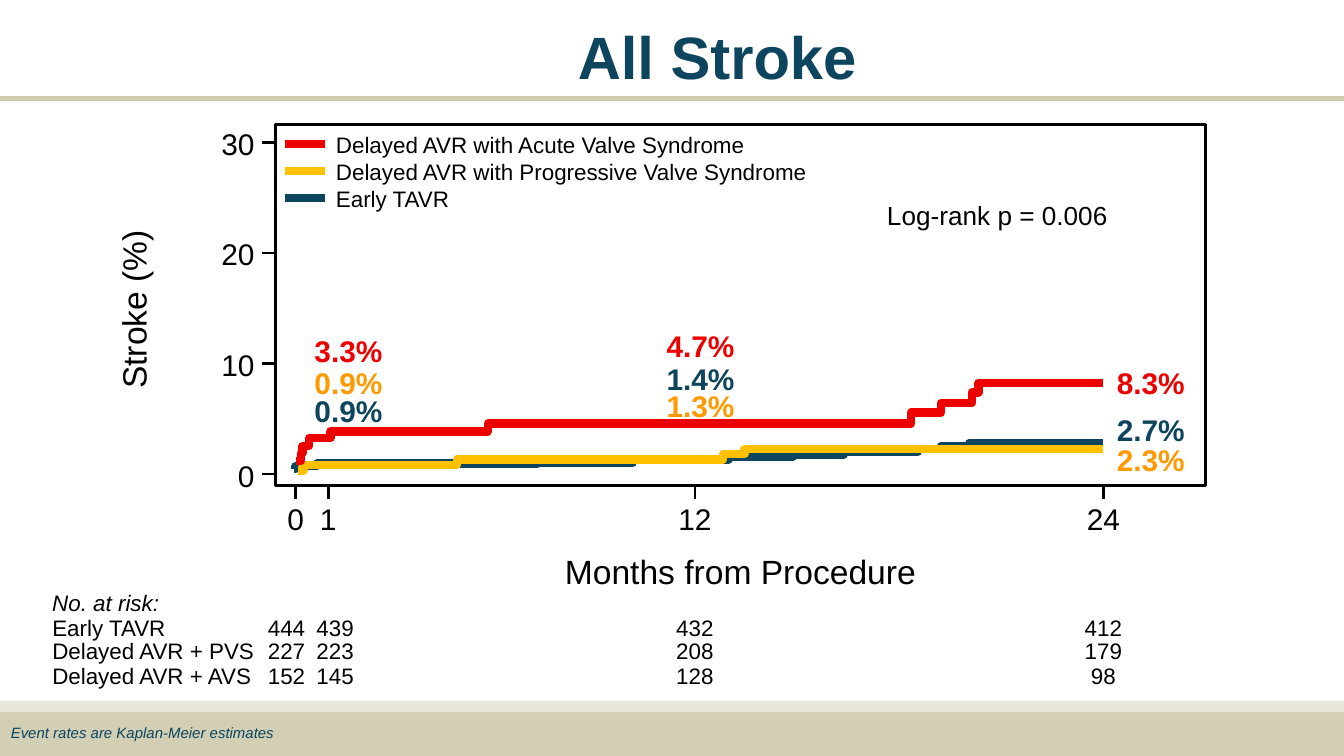
"""Build the All Stroke slide with its Kaplan-Meier curves."""
from dataclasses import dataclass
from typing import Optional

from lxml.etree import SubElement
from pptx import Presentation
from pptx.dml.color import RGBColor
from pptx.enum.shapes import MSO_CONNECTOR as Connector, MSO_SHAPE as Shape
from pptx.enum.text import MSO_ANCHOR as Anchor, MSO_AUTO_SIZE as AutoSize, PP_ALIGN as Align
from pptx.oxml.ns import qn
from pptx.util import Pt


@dataclass(frozen=True)
class Theme:
    font: str = "Arial"
    black: str = "000000"
    navy: str = "0D445E"
    red: str = "ED0000"
    gold: str = "FFC000"
    orange: str = "FF9900"
    band: str = "D2CFB5"
    band_light: str = "E9E7DA"
    rule: str = "D0CDAE"
    title: float = 32
    axis_title: float = 18
    value: float = 16
    note: float = 14
    label: float = 12
    footer: float = 8
    axis_line: float = 1.5
    curve_line: float = 4.5


@dataclass(frozen=True)
class Line:
    text: str
    color: str = Theme.black
    spacing: Optional[float] = None
    before: float = 0


@dataclass(frozen=True)
class TextBox:
    left: float
    top: float
    width: float
    height: float
    size: float
    lines: tuple[Line, ...]
    align: Align = Align.LEFT
    bold: bool = False
    italic: bool = False
    tabs: tuple[float, ...] = ()
    vertical: bool = False


@dataclass(frozen=True)
class Curve:
    """A step curve: a start point, then the x and new y of each step."""
    label: str
    color: str
    start: tuple[float, float]
    steps: tuple[tuple[float, float], ...]


THEME = Theme()
LEFT, TOP, RIGHT, BOTTOM = 147.6, 66.8, 645.8, 260.3
TICK = 7.2
CURVE_END = 591.1
ZERO_Y, TEN_PERCENT = 254, 59.25
MONTHS = {"0": 158.4, "1": 175.8, "12": 372.3, "24": 591.1}

CURVES = (
    Curve("Delayed AVR with Acute Valve Syndrome", THEME.red, (158.4, 247),
          ((161.3, 242.6), (162, 239), (165.6, 234.7), (177.1, 231.1), (261.4, 226.8),
           (488.2, 221), (504, 216), (520.6, 210.2), (524.2, 205.2))),
    Curve("Delayed AVR with Progressive Valve Syndrome", THEME.gold, (159.8, 252),
          ((162.7, 249.1), (244.8, 246.2), (387.4, 243.4), (398.9, 240.5))),
    Curve("Early TAVR", THEME.navy, (157.7, 251.3),
          ((158.4, 249.8), (169.9, 248.4), (288, 247.7), (339.1, 246.2), (390.2, 244.8),
           (424.8, 243.4), (452.2, 241.9), (491.8, 240.5), (504, 239), (519.1, 237.6))),
)


def at_risk(*values: str) -> tuple[Line, ...]:
    """Return the rows of one column of the risk table."""
    return tuple(Line(value, spacing=gap) for value, gap in zip(values, (13.3, 12.3, 13.3)))


def value_box(left: float, top: float, *lines: Line) -> TextBox:
    """Return a box of bold event rates."""
    return TextBox(left, top, 44, 19 * len(lines), THEME.value, lines, bold=True)


TEXTS = (
    TextBox(272, 295.2, 249.4, 22, THEME.axis_title, (Line("Months from Procedure"),), Align.CENTER),
    TextBox(61.2, 121.7, 22.3, 86.6, THEME.axis_title, (Line("Stroke (%)", spacing=20.9),), vertical=True),
    TextBox(475.2, 107, 130, 18, THEME.note, (Line("Log-rank p = 0.006"),)),
    value_box(168.5, 180.5, Line("3.3%", THEME.red, 17.1), Line("0.9%", THEME.orange, 17.1)),
    value_box(168.5, 210.5, Line("0.9%", THEME.navy)),
    value_box(357.1, 177.5, Line("4.7%", THEME.red, 17.4), Line("1.4%", THEME.navy, 17.4)),
    value_box(357.1, 207.5, Line("1.3%", THEME.orange)),
    value_box(598.3, 195.6, Line("8.3%", THEME.red), Line("2.7%", THEME.navy, 16.1, 9),
              Line("2.3%", THEME.orange, 16.1)),
    TextBox(28, 315.5, 80, 15, THEME.label, (Line("No. at risk:"),), italic=True),
    TextBox(28, 330, 170, 39, THEME.label,
            at_risk("Early TAVR\t444\t439", "Delayed AVR + PVS\t227\t223", "Delayed AVR + AVS\t152\t145"),
            tabs=(115.5, 141.5)),
    TextBox(MONTHS["12"] - 15, 330, 30, 39, THEME.label, at_risk("432", "208", "128"), Align.CENTER),
    TextBox(MONTHS["24"] - 15, 330, 30, 39, THEME.label, at_risk("412", "179", "98"), Align.CENTER),
    TextBox(5.8, 387.7, 160, 11, THEME.footer,
            (Line("Event rates are Kaplan-Meier estimates", THEME.navy),), italic=True),
)


def style_font(font, size: float, color: str, bold: bool = False, italic: bool = False) -> None:
    """Apply the slide's typeface with the given look."""
    font.name, font.size, font.bold, font.italic = THEME.font, Pt(size), bold, italic
    font.color.rgb = RGBColor.from_string(color)


def draw_text(page, item: TextBox) -> None:
    """Draw a text box without inner margins."""
    box = page.shapes.add_textbox(Pt(item.left), Pt(item.top), Pt(item.width), Pt(item.height))
    frame = box.text_frame
    frame.word_wrap = True
    frame.margin_left = frame.margin_right = frame.margin_top = frame.margin_bottom = 0
    if item.vertical:
        frame._txBody.bodyPr.set("vert", "vert270")
    for index, line in enumerate(item.lines):
        para = frame.add_paragraph() if index else frame.paragraphs[0]
        para.text = line.text
        para.alignment = item.align
        if line.spacing:
            para.line_spacing = Pt(line.spacing)
        if line.before:
            para.space_before = Pt(line.before)
        if item.tabs:
            tab_list = SubElement(para._p.get_or_add_pPr(), qn("a:tabLst"))
            for position in item.tabs:
                SubElement(tab_list, qn("a:tab"), pos=str(Pt(position)), algn="l")
        style_font(para.font, item.size, line.color, item.bold, item.italic)


def draw_line(page, x1: float, y1: float, x2: float, y2: float, color: str, width: float) -> None:
    """Draw a straight line without a shadow."""
    line = page.shapes.add_connector(Connector.STRAIGHT, Pt(x1), Pt(y1), Pt(x2), Pt(y2))
    line.line.color.rgb = RGBColor.from_string(color)
    line.line.width = Pt(width)
    SubElement(line._element.spPr, qn("a:effectLst"))


def draw_band(page, top: float, height: float, color: str) -> None:
    """Draw a filled band across the slide."""
    band = page.shapes.add_shape(Shape.RECTANGLE, 0, Pt(top), Pt(720), Pt(height))
    band.shadow.inherit = False
    band.fill.solid()
    band.fill.fore_color.rgb = RGBColor.from_string(color)
    band.line.fill.background()


def outline(shape, color: str, width: float) -> None:
    """Leave only a coloured outline on a shape."""
    shape.shadow.inherit = False
    shape.fill.background()
    shape.line.color.rgb = RGBColor.from_string(color)
    shape.line.width = Pt(width)


def draw_curve(page, curve: Curve) -> None:
    """Draw a step curve as one open outline."""
    x, y = curve.start
    builder = page.shapes.build_freeform(Pt(x), Pt(y), scale=1)
    points = []
    for step_x, step_y in curve.steps:
        points += [(Pt(step_x), Pt(y)), (Pt(step_x), Pt(step_y))]
        y = step_y
    builder.add_line_segments(points + [(Pt(CURVE_END), Pt(y))], close=False)
    outline(builder.convert_to_shape(), curve.color, THEME.curve_line)


def draw_axes(page) -> None:
    """Draw the plot frame with its ticks and tick labels."""
    frame = page.shapes.add_shape(Shape.RECTANGLE, Pt(LEFT), Pt(TOP), Pt(RIGHT - LEFT), Pt(BOTTOM - TOP))
    outline(frame, THEME.black, THEME.axis_line)
    for step in range(4):
        y = ZERO_Y - step * TEN_PERCENT
        draw_line(page, LEFT - TICK, y, LEFT, y, THEME.black, THEME.axis_line)
        draw_text(page, TextBox(106, y - 9, 30.3, 19, THEME.value, (Line(str(step * 10)),), Align.RIGHT))
    for month, x in MONTHS.items():
        draw_line(page, x, BOTTOM, x, BOTTOM + TICK, THEME.black, THEME.axis_line)
        draw_text(page, TextBox(x - 10, 268.5, 20, 19, THEME.value, (Line(month),), Align.CENTER))


def draw_title(page) -> None:
    """Place and format the title."""
    title = page.shapes.title
    title.left, title.top, title.width, title.height = Pt(173.5), Pt(1.5), Pt(538.5), Pt(50.4)
    frame = title.text_frame
    frame.auto_size, frame.vertical_anchor = AutoSize.NONE, Anchor.TOP
    frame.margin_left, frame.margin_top, frame.margin_right, frame.margin_bottom = Pt(136), Pt(9), 0, 0
    para = frame.paragraphs[0]
    para.text, para.alignment = "All Stroke", Align.LEFT
    style_font(para.font, THEME.title, THEME.navy, bold=True)


def main() -> None:
    """Build and save the deck."""
    deck = Presentation()
    deck.slide_width, deck.slide_height = Pt(720), Pt(405)
    page = deck.slides.add_slide(deck.slide_layouts[5])
    draw_band(page, 381.5, 23.5, THEME.band)
    draw_band(page, 375.5, 6, THEME.band_light)
    draw_line(page, 0, 52.8, 720, 52.8, THEME.rule, 3)
    draw_title(page)
    draw_axes(page)
    for curve in reversed(CURVES):
        draw_curve(page, curve)
    for index, curve in enumerate(CURVES):
        y = 77 + index * 14.6
        draw_line(page, 152.6, y, 174.2, y, curve.color, THEME.curve_line)
        draw_text(page, TextBox(180, y - 6.8, 260, 15, THEME.label, (Line(curve.label),)))
    for item in TEXTS:
        draw_text(page, item)
    deck.save("out.pptx")


if __name__ == "__main__":
    main()
